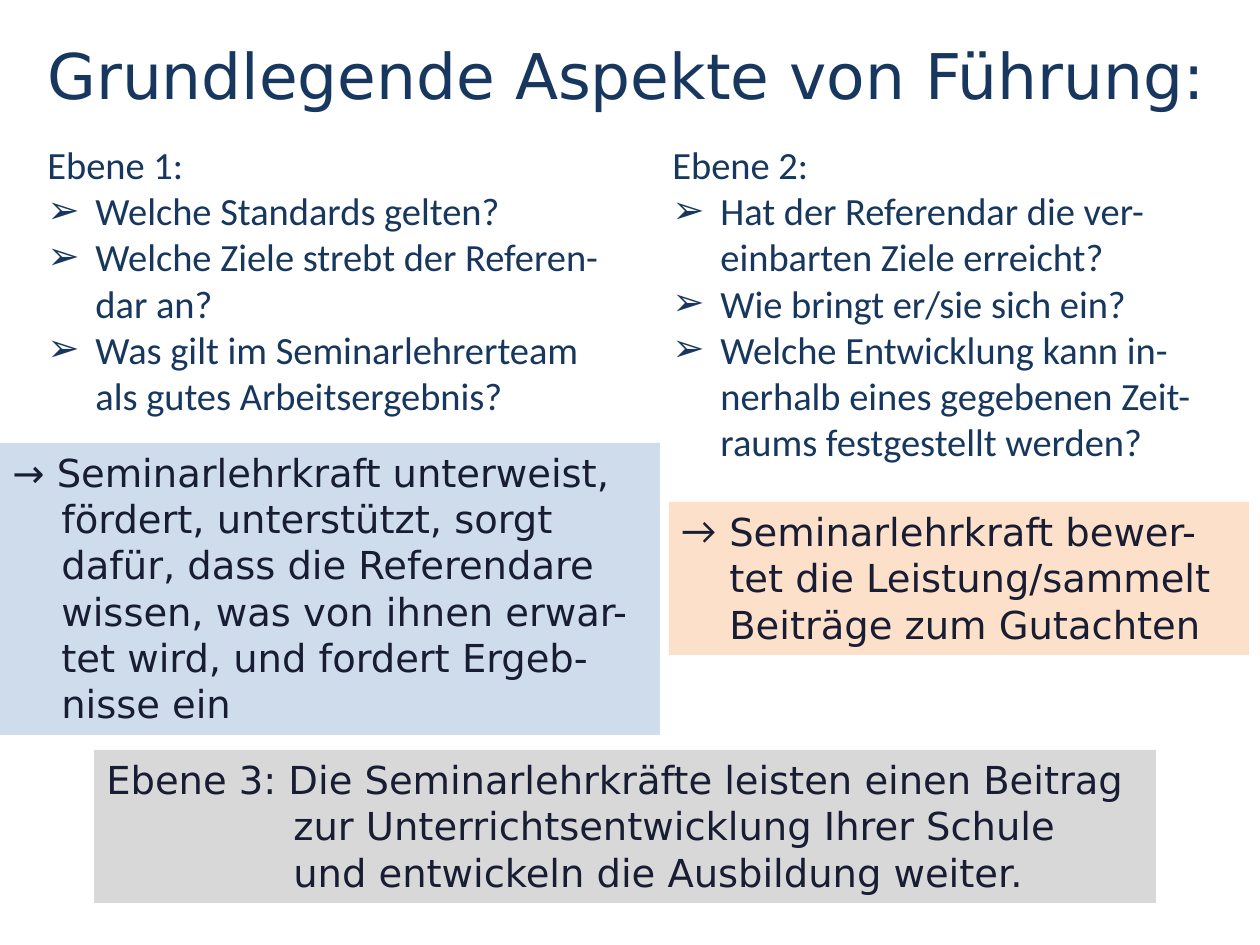
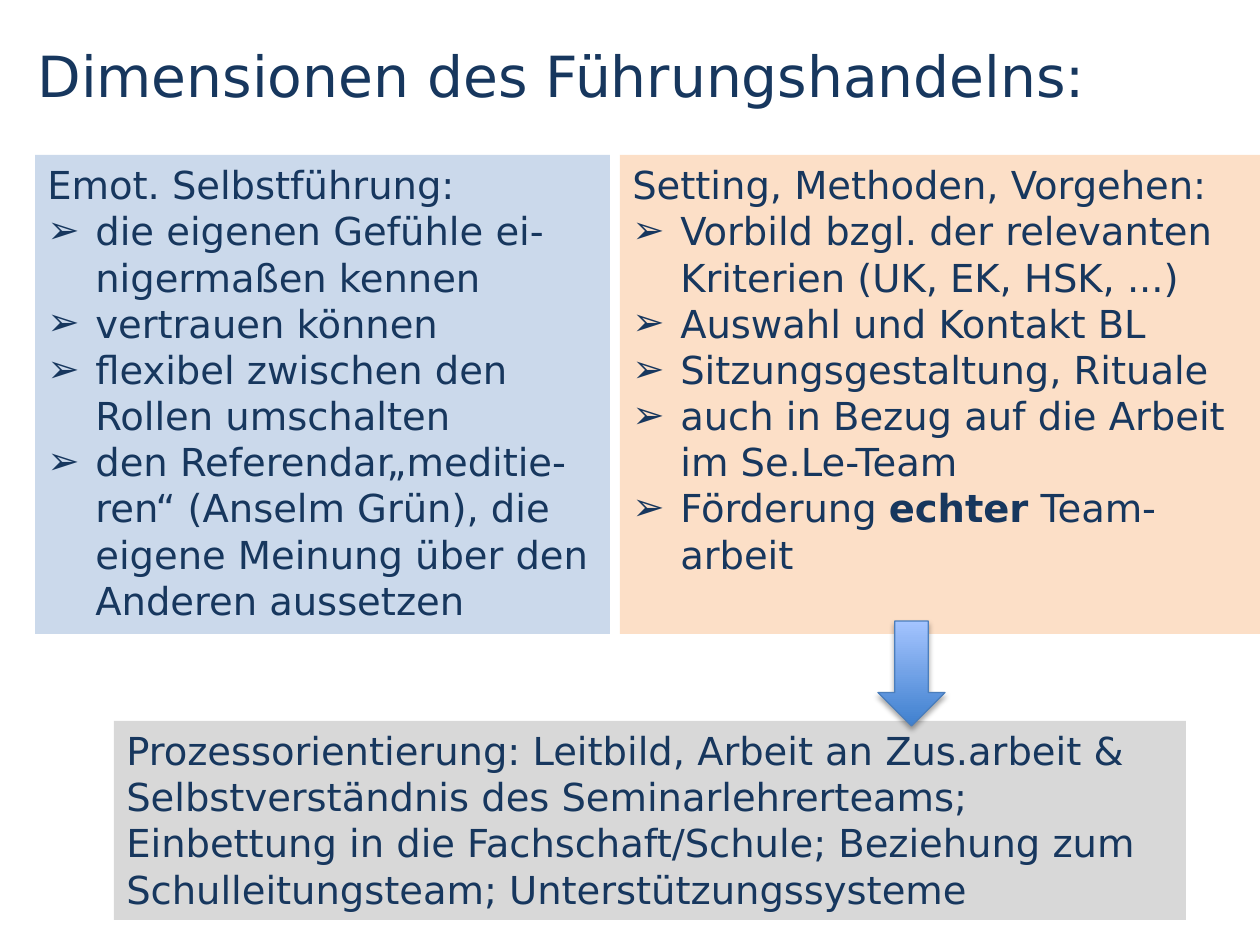
"""Build two slides on leadership levels and dimensions."""
from dataclasses import dataclass

from lxml import etree
from pptx import Presentation
from pptx.dml.color import RGBColor
from pptx.enum.shapes import MSO_SHAPE
from pptx.enum.text import MSO_ANCHOR, MSO_AUTO_SIZE, PP_ALIGN
from pptx.oxml.ns import qn
from pptx.shapes.autoshape import Shape
from pptx.slide import Slide
from pptx.util import Emu, Pt

RECTANGLE = MSO_SHAPE.RECTANGLE
DOWN_ARROW = MSO_SHAPE.DOWN_ARROW
TOP = MSO_ANCHOR.TOP
MIDDLE = MSO_ANCHOR.MIDDLE
LEFT = PP_ALIGN.LEFT
NO_AUTO_SIZE = MSO_AUTO_SIZE.NONE

EMU_PER_PX = 914400 / 126
SLIDE_WIDTH, SLIDE_HEIGHT = 1260, 945
BLANK_LAYOUT = 6
BULLET_INDENT = 48
BOLD_MARK = "**"
CHEVRON = "➢"
ARROW = "→"


@dataclass(frozen=True)
class Theme:
    """Colours, fonts and type sizes of both slides."""

    navy: str = "17375E"
    ink: str = "191D34"
    blue: str = "95B3D7"
    orange: str = "FAC090"
    grey: str = "B2B2B2"
    arrow_dark: str = "3F80CE"
    arrow_light: str = "A4C4FF"
    arrow_line: str = "4B7EBC"
    shadow: str = "000000"
    sans: str = "DejaVu Sans"
    body: str = "Calibri"
    title_size: float = 36
    small_title_size: float = 32.4
    body_size: float = 22


THEME = Theme()


@dataclass(frozen=True)
class Box:
    """Position and size in px."""

    left: int
    top: int
    width: int
    height: int

    def emu(self) -> tuple[Emu, Emu, Emu, Emu]:
        """Return the box in EMU."""
        return px(self.left), px(self.top), px(self.width), px(self.height)


@dataclass(frozen=True)
class Line:
    """One paragraph with an optional bullet and hanging indent in px."""

    text: str
    bullet: str = ""
    hanging: int = 0


@dataclass(frozen=True)
class Panel:
    """A text block with an optional translucent fill."""

    box: Box
    lines: list[Line]
    fill: str = ""
    opacity: int = 100
    font: str = THEME.sans
    color: str = THEME.navy
    wrap: bool = True


def px(length: int) -> Emu:
    """Turn px into EMU."""
    return Emu(round(length * EMU_PER_PX))


def rgb(value: str) -> RGBColor:
    """Return the colour for a hex value."""
    return RGBColor.from_string(value)


def bulleted(heading: str, *items: str) -> list[Line]:
    """Return a heading followed by chevron items."""
    return [Line(heading)] + [Line(item, CHEVRON, BULLET_INDENT) for item in items]


def write_text(shape: Shape, lines: list[Line], *, font: str = THEME.sans,
               size: float = THEME.body_size, color: str = THEME.navy,
               wrap: bool = True, anchor: MSO_ANCHOR = TOP) -> None:
    """Write formatted paragraphs into a shape."""
    frame = shape.text_frame
    frame.word_wrap = wrap
    frame.auto_size = NO_AUTO_SIZE
    frame.vertical_anchor = anchor
    for index, line in enumerate(lines):
        paragraph = frame.add_paragraph() if index else frame.paragraphs[0]
        paragraph.alignment = LEFT
        if line.hanging:
            properties = paragraph._p.get_or_add_pPr()
            properties.set("marL", str(px(line.hanging)))
            properties.set("indent", str(-px(line.hanging)))
            if line.bullet:
                etree.SubElement(properties, qn("a:buFont"), typeface=THEME.body)
                etree.SubElement(properties, qn("a:buChar"), char=line.bullet)
        for row_index, row in enumerate(line.text.split("\n")):
            if row_index:
                paragraph.add_line_break()
            for part_index, part in enumerate(row.split(BOLD_MARK)):
                run = paragraph.add_run()
                run.text = part
                run.font.name = font
                run.font.size = Pt(size)
                run.font.bold = part_index % 2 == 1
                run.font.color.rgb = rgb(color)


def add_title(slide: Slide, text: str, box: Box, size: float) -> None:
    """Add a slide title."""
    title = slide.shapes.add_textbox(*box.emu())
    write_text(title, [Line(text)], size=size, anchor=MIDDLE)


def add_panel(slide: Slide, panel: Panel) -> None:
    """Add a plain or filled text block."""
    if panel.fill:
        shape = slide.shapes.add_shape(RECTANGLE, *panel.box.emu())
        shape.shadow.inherit = False
        shape.line.fill.background()
        shape.fill.solid()
        shape.fill.fore_color.rgb = rgb(panel.fill)
        color = shape.element.spPr.find(qn("a:solidFill"))[0]
        etree.SubElement(color, qn("a:alpha"), val=str(panel.opacity * 1000))
    else:
        shape = slide.shapes.add_textbox(*panel.box.emu())
    write_text(shape, panel.lines, font=panel.font, color=panel.color, wrap=panel.wrap)


def add_down_arrow(slide: Slide, box: Box) -> None:
    """Add the shaded arrow with a soft shadow."""
    arrow = slide.shapes.add_shape(DOWN_ARROW, *box.emu())
    arrow.fill.gradient()
    arrow.fill.gradient_angle = 90
    for stop, color in zip(arrow.fill.gradient_stops, (THEME.arrow_dark, THEME.arrow_light)):
        stop.color.rgb = rgb(color)
    arrow.line.color.rgb = rgb(THEME.arrow_line)
    arrow.line.width = Pt(0.75)
    arrow.shadow.inherit = False
    effects = arrow.element.spPr.find(qn("a:effectLst"))
    shadow = etree.SubElement(effects, qn("a:outerShdw"), blurRad=str(Pt(3.1)),
                              dist=str(Pt(1.8)), dir="5400000", rotWithShape="0")
    color = etree.SubElement(shadow, qn("a:srgbClr"), val=THEME.shadow)
    etree.SubElement(color, qn("a:alpha"), val="35000")


ASPECT_PANELS = [
    Panel(Box(35, 135, 586, 292), bulleted(
        "Ebene 1:",
        "Welche Standards gelten?",
        "Welche Ziele strebt der Referen-dar an?",
        "Was gilt im Seminarlehrerteam als gutes Arbeitsergebnis?",
    ), font=THEME.body),
    Panel(Box(660, 135, 576, 339), bulleted(
        "Ebene 2:",
        "Hat der Referendar die ver-einbarten Ziele erreicht?",
        "Wie bringt er/sie sich ein?",
        "Welche Entwicklung kann in-nerhalb eines gegebenen Zeit-raums festgestellt werden?",
    ), font=THEME.body),
    Panel(Box(94, 750, 1062, 153), [Line(
        "Ebene 3: Die Seminarlehrkräfte leisten einen Beitrag\n"
        "zur Unterrichtsentwicklung Ihrer Schule\n"
        "und entwickeln die Ausbildung weiter.", hanging=187,
    )], THEME.grey, 50, color=THEME.ink),
    Panel(Box(669, 502, 580, 153), [Line(
        "Seminarlehrkraft bewer-\ntet die Leistung/sammelt\nBeiträge zum Gutachten",
        ARROW, BULLET_INDENT,
    )], THEME.orange, 48, color=THEME.ink, wrap=False),
    Panel(Box(0, 443, 660, 292), [Line(
        "→ Seminarlehrkraft unterweist,\nfördert, unterstützt, sorgt\n"
        "dafür, dass die Referendare\nwissen, was von ihnen erwar-\n"
        "tet wird, und fordert Ergeb-\nnisse ein", hanging=49,
    )], THEME.blue, 46, color=THEME.ink),
]

DIMENSION_PANELS = [
    Panel(Box(35, 155, 575, 479), bulleted(
        "Emot. Selbstführung:",
        "die eigenen Gefühle ei-nigermaßen kennen",
        "vertrauen können",
        "flexibel zwischen den Rollen umschalten",
        "den Referendar„meditie-ren“ (Anselm Grün), die eigene Meinung über den "
        "Anderen aussetzen",
    ), THEME.blue, 49),
    Panel(Box(620, 155, 640, 479), bulleted(
        "Setting, Methoden, Vorgehen:",
        "Vorbild bzgl. der relevanten Kriterien (UK, EK, HSK, ...)",
        "Auswahl und Kontakt BL",
        "Sitzungsgestaltung, Rituale",
        "auch in Bezug auf die Arbeit im Se.Le-Team",
        "Förderung **echter** Team-arbeit",
    ), THEME.orange, 50),
    Panel(Box(114, 721, 1072, 199), [Line(
        "Prozessorientierung: Leitbild, Arbeit an Zus.arbeit & Selbstverständnis des "
        "Seminarlehrerteams; Einbettung in die Fachschaft/Schule; Beziehung zum "
        "Schulleitungsteam; Unterstützungssysteme",
    )], THEME.grey, 50),
]


def main() -> None:
    """Build and save the presentation."""
    presentation = Presentation()
    presentation.slide_width = px(SLIDE_WIDTH)
    presentation.slide_height = px(SLIDE_HEIGHT)
    blank = presentation.slide_layouts[BLANK_LAYOUT]

    aspects = presentation.slides.add_slide(blank)
    add_title(aspects, "Grundlegende Aspekte von Führung:",
              Box(35, 27, 1201, 95), THEME.title_size)
    for panel in ASPECT_PANELS:
        add_panel(aspects, panel)

    dimensions = presentation.slides.add_slide(blank)
    add_title(dimensions, "Dimensionen des Führungshandelns:",
              Box(25, 27, 1191, 95), THEME.small_title_size)
    for panel in DIMENSION_PANELS:
        add_panel(dimensions, panel)
    add_down_arrow(dimensions, Box(878, 621, 67, 105))

    presentation.save("out.pptx")


if __name__ == "__main__":
    main()
